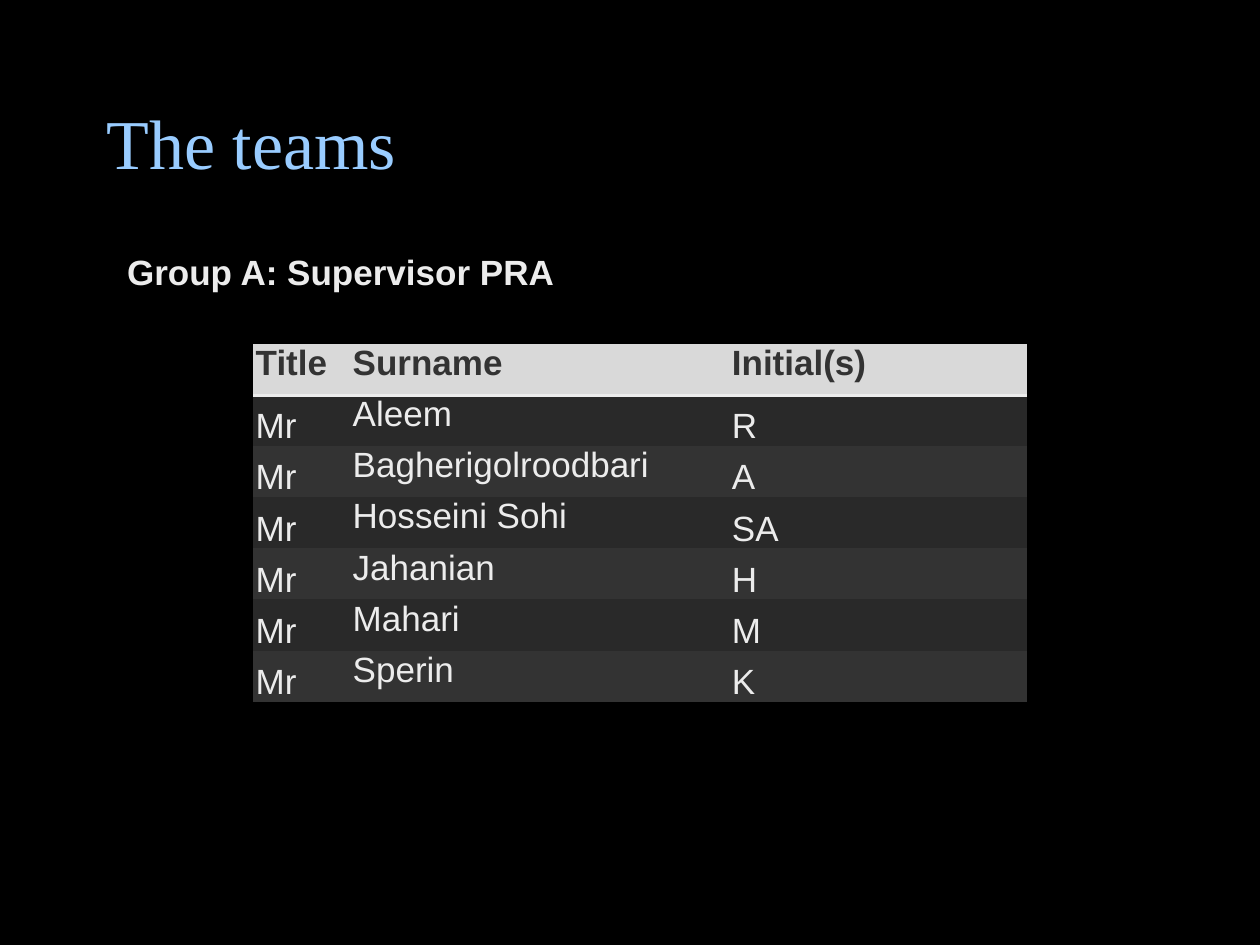
from dataclasses import dataclass

from lxml import etree
from pptx import Presentation
from pptx.dml.color import RGBColor
from pptx.enum.text import MSO_ANCHOR
from pptx.oxml.ns import qn
from pptx.util import Inches, Pt

TOP = MSO_ANCHOR.TOP
MIDDLE = MSO_ANCHOR.MIDDLE
BOTTOM = MSO_ANCHOR.BOTTOM
PLAIN_TABLE_STYLE = "{2D5ABB26-0587-4C30-8999-92F81FD0307C}"


@dataclass(frozen=True)
class Theme:
    """Colours, fonts and type sizes of the slide."""

    background: str = "000000"
    title: str = "99CCFF"
    light: str = "ECECEC"
    dark: str = "333333"
    header_fill: str = "D9D9D9"
    band_fills: tuple = ("292929", "333333")
    title_font: str = "Times New Roman"
    body_font: str = "Arial"
    title_size: int = 40
    body_size: int = 20
    rule_width: int = 2


THEME = Theme()
HEADINGS = ("Title", "Surname", "Initial(s)")
MEMBERS = (
    ("Mr", "Aleem", "R"),
    ("Mr", "Bagherigolroodbari", "A"),
    ("Mr", "Hosseini Sohi", "SA"),
    ("Mr", "Jahanian", "H"),
    ("Mr", "Mahari", "M"),
    ("Mr", "Sperin", "K"),
)
COLUMN_WIDTHS = (0.77, 3.01, 2.36)
COLUMN_ANCHORS = (BOTTOM, TOP, BOTTOM)
TABLE_HEIGHT = 2.84


def add_run(text_frame, text, color, font=THEME.body_font, size=THEME.body_size, bold=False):
    """Add a styled run to the first paragraph of a text frame."""
    run = text_frame.paragraphs[0].add_run()
    run.text = text
    run.font.name = font
    run.font.size = Pt(size)
    run.font.bold = bold
    run.font.color.rgb = RGBColor.from_string(color)


def add_text_box(slide, left, top, width, height, anchor=TOP):
    """Add a wrapping text box and return its text frame."""
    shape = slide.shapes.add_textbox(Inches(left), Inches(top), Inches(width), Inches(height))
    text_frame = shape.text_frame
    text_frame.word_wrap = True
    text_frame.vertical_anchor = anchor
    return text_frame


def add_bottom_rule(cell, color, width):
    """Draw a solid line under a table cell."""
    line = etree.Element(qn("a:lnB"), w=str(Pt(width)))
    fill = etree.SubElement(line, qn("a:solidFill"))
    etree.SubElement(fill, qn("a:srgbClr"), val=color)
    cell._tc.get_or_add_tcPr().insert(0, line)


def fill_cell(cell, text, color, fill, anchor=TOP, bold=False):
    """Set the text, fill, margins and anchor of a table cell."""
    cell.margin_left = cell.margin_right = Inches(0.02)
    cell.margin_top = cell.margin_bottom = 0
    cell.vertical_anchor = anchor
    cell.fill.solid()
    cell.fill.fore_color.rgb = RGBColor.from_string(fill)
    add_run(cell.text_frame, text, color, bold=bold)


def add_team_table(slide, left, top):
    """Add the table of team members with a ruled header and banded rows."""
    row_count = len(MEMBERS) + 1
    frame = slide.shapes.add_table(
        row_count, len(HEADINGS), Inches(left), Inches(top),
        Inches(sum(COLUMN_WIDTHS)), Inches(TABLE_HEIGHT))
    table = frame.table
    table._tbl.tblPr.find(qn("a:tableStyleId")).text = PLAIN_TABLE_STYLE
    for column, width in zip(table.columns, COLUMN_WIDTHS):
        column.width = Inches(width)
    for row in table.rows:
        row.height = Inches(TABLE_HEIGHT / row_count)
    for cell, heading in zip(table.rows[0].cells, HEADINGS):
        fill_cell(cell, heading, THEME.dark, THEME.header_fill, bold=True)
        add_bottom_rule(cell, THEME.light, THEME.rule_width)
    for index, member in enumerate(MEMBERS):
        fill = THEME.band_fills[index % len(THEME.band_fills)]
        for cell, text, anchor in zip(table.rows[index + 1].cells, member, COLUMN_ANCHORS):
            fill_cell(cell, text, THEME.light, fill, anchor)


def main():
    """Build the teams slide and save it."""
    presentation = Presentation()
    presentation.slide_width = Inches(10)
    presentation.slide_height = Inches(7.5)
    slide = presentation.slides.add_slide(presentation.slide_layouts[6])
    slide.background.fill.solid()
    slide.background.fill.fore_color.rgb = RGBColor.from_string(THEME.background)

    title = add_text_box(slide, 0.75, 0.5, 8.5, 1.25, MIDDLE)
    add_run(title, "The teams", THEME.title, THEME.title_font, THEME.title_size)
    group = add_text_box(slide, 0.91, 1.94, 4.02, 0.44)
    add_run(group, "Group A: Supervisor PRA", THEME.light, bold=True)
    add_team_table(slide, 2.01, 2.73)
    presentation.save("out.pptx")


if __name__ == "__main__":
    main()
